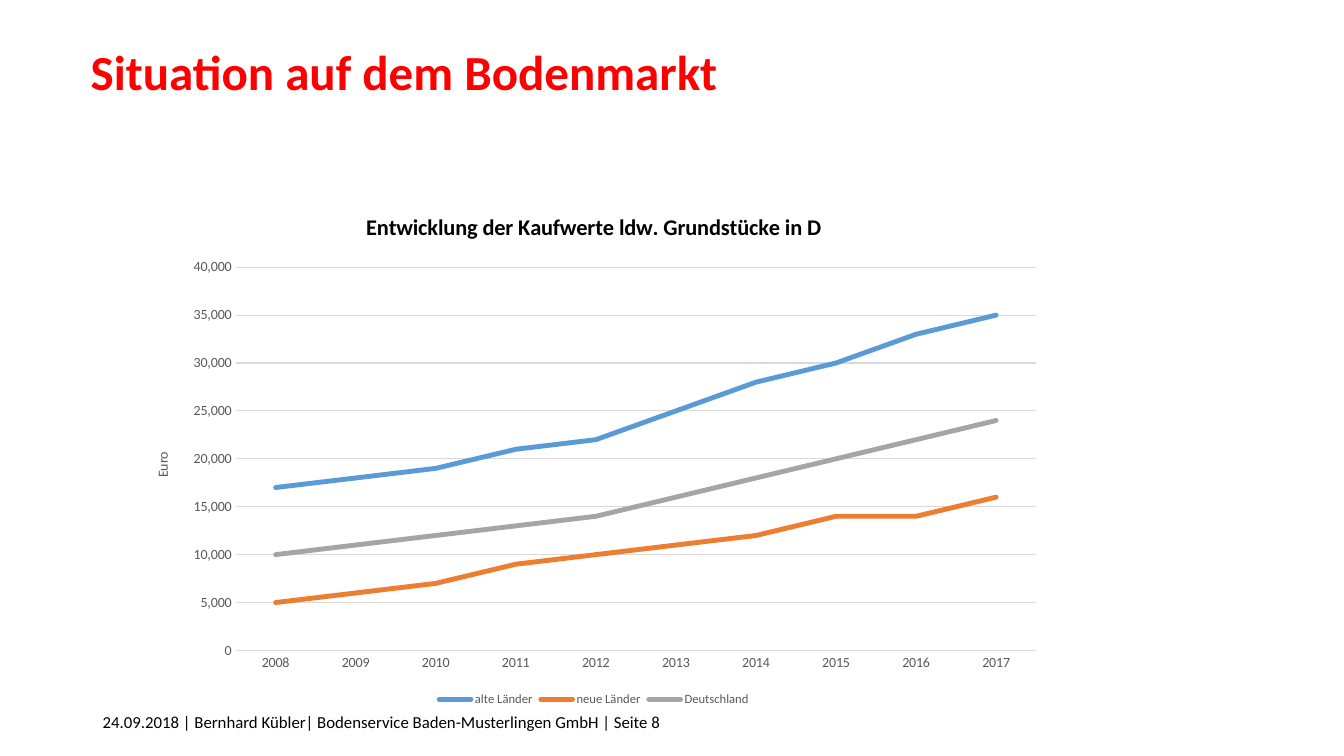
from pptx import Presentation
from pptx.chart.data import CategoryChartData
from pptx.dml.color import RGBColor
from pptx.enum.chart import XL_CHART_TYPE as ChartType, XL_LEGEND_POSITION as LegendPos
from pptx.enum.chart import XL_TICK_MARK as TickMark
from pptx.enum.text import MSO_ANCHOR as Anchor, PP_ALIGN as Align
from pptx.oxml.ns import qn
from pptx.util import Inches, Pt

FONT = "Calibri"
RED = RGBColor(0xFF, 0x00, 0x00)
BLACK = RGBColor(0x00, 0x00, 0x00)
GRAY = RGBColor(0x59, 0x59, 0x59)
GRID = RGBColor(0xD9, 0xD9, 0xD9)
BLUE = RGBColor(0x5B, 0x9B, 0xD5)
ORANGE = RGBColor(0xED, 0x7D, 0x31)
SILVER = RGBColor(0xA5, 0xA5, 0xA5)

YEARS = [str(year) for year in range(2008, 2018)]
LAND_PRICES = [
    ("alte Länder", BLUE,
     [17000, 18000, 19000, 21000, 22000, 25000, 28000, 30000, 33000, 35000]),
    ("neue Länder", ORANGE,
     [5000, 6000, 7000, 9000, 10000, 11000, 12000, 14000, 14000, 16000]),
    ("Deutschland", SILVER,
     [10000, 11000, 12000, 13000, 14000, 16000, 18000, 20000, 22000, 24000]),
]


def set_font(font, size, color, bold=False):
    font.name = FONT
    font.size = Pt(size)
    font.bold = bold
    font.color.rgb = color


def set_line(line, color, width):
    line.color.rgb = color
    line.width = Pt(width)


def add_heading(slide, text):
    heading = slide.shapes.title
    heading.left, heading.top = Inches(0.8), Inches(0.43)
    heading.width, heading.height = Inches(11.5), Inches(0.69)
    frame = heading.text_frame
    frame.text = text
    frame.word_wrap = True
    frame.vertical_anchor = Anchor.TOP
    paragraph = frame.paragraphs[0]
    paragraph.alignment = Align.LEFT
    paragraph.line_spacing = 0.9
    set_font(paragraph.font, 35, RED, bold=True)


def add_footer(slide, text):
    footer = slide.shapes.add_textbox(Inches(0.92), Inches(7.01), Inches(6.46), Inches(0.4))
    frame = footer.text_frame
    frame.word_wrap = True
    frame.text = text
    set_font(frame.paragraphs[0].font, 12, BLACK)


def set_caption(caption, text, size, color, bold=False):
    """Fill the title of a chart or of an axis."""
    frame = caption.text_frame
    frame.text = text
    set_font(frame.paragraphs[0].font, size, color, bold)


def format_axes(chart):
    years, prices = chart.category_axis, chart.value_axis
    for axis in (years, prices):
        axis.major_tick_mark = axis.minor_tick_mark = TickMark.NONE
        set_font(axis.tick_labels.font, 10, GRAY)
    set_line(years.format.line, GRID, 0.75)
    prices.format.line.fill.background()
    prices.minimum_scale, prices.maximum_scale, prices.major_unit = 0, 40000, 5000
    prices.tick_labels.number_format = "#,##0"
    prices.tick_labels.number_format_is_linked = False
    set_line(prices.major_gridlines.format.line, GRID, 0.75)
    set_caption(prices.axis_title, "Euro", 10, GRAY)


def format_series(series, color):
    series.smooth = False
    set_line(series.format.line, color, 3.5)
    outline = series.format.line.fill._xPr
    if outline.tag == qn("a:ln"):
        outline.set("cap", "rnd")


def add_price_chart(slide):
    data = CategoryChartData(number_format="#,##0")
    data.categories = YEARS
    for name, _, values in LAND_PRICES:
        data.add_series(name, values)
    chart = slide.shapes.add_chart(
        ChartType.LINE, Inches(1.32), Inches(1.91), Inches(9.14), Inches(5.14), data).chart
    set_font(chart.font, 10, BLACK)
    set_caption(chart.chart_title, "Entwicklung der Kaufwerte ldw. Grundstücke in D",
                16, BLACK, bold=True)
    chart.has_legend = True
    chart.legend.position = LegendPos.BOTTOM
    chart.legend.include_in_layout = False
    set_font(chart.legend.font, 9, GRAY)
    format_axes(chart)
    chart.plots[0].vary_by_categories = False
    for series, (_, color, _) in zip(chart.plots[0].series, LAND_PRICES):
        format_series(series, color)


def main():
    prs = Presentation()
    prs.slide_width, prs.slide_height = Inches(13.33), Inches(7.5)
    slide = prs.slides.add_slide(prs.slide_layouts[5])
    add_footer(slide, "24.09.2018 | Bernhard Kübler| Bodenservice Baden-Musterlingen GmbH | Seite 8")
    add_heading(slide, "Situation auf dem Bodenmarkt")
    add_price_chart(slide)
    prs.save("out.pptx")


if __name__ == "__main__":
    main()
